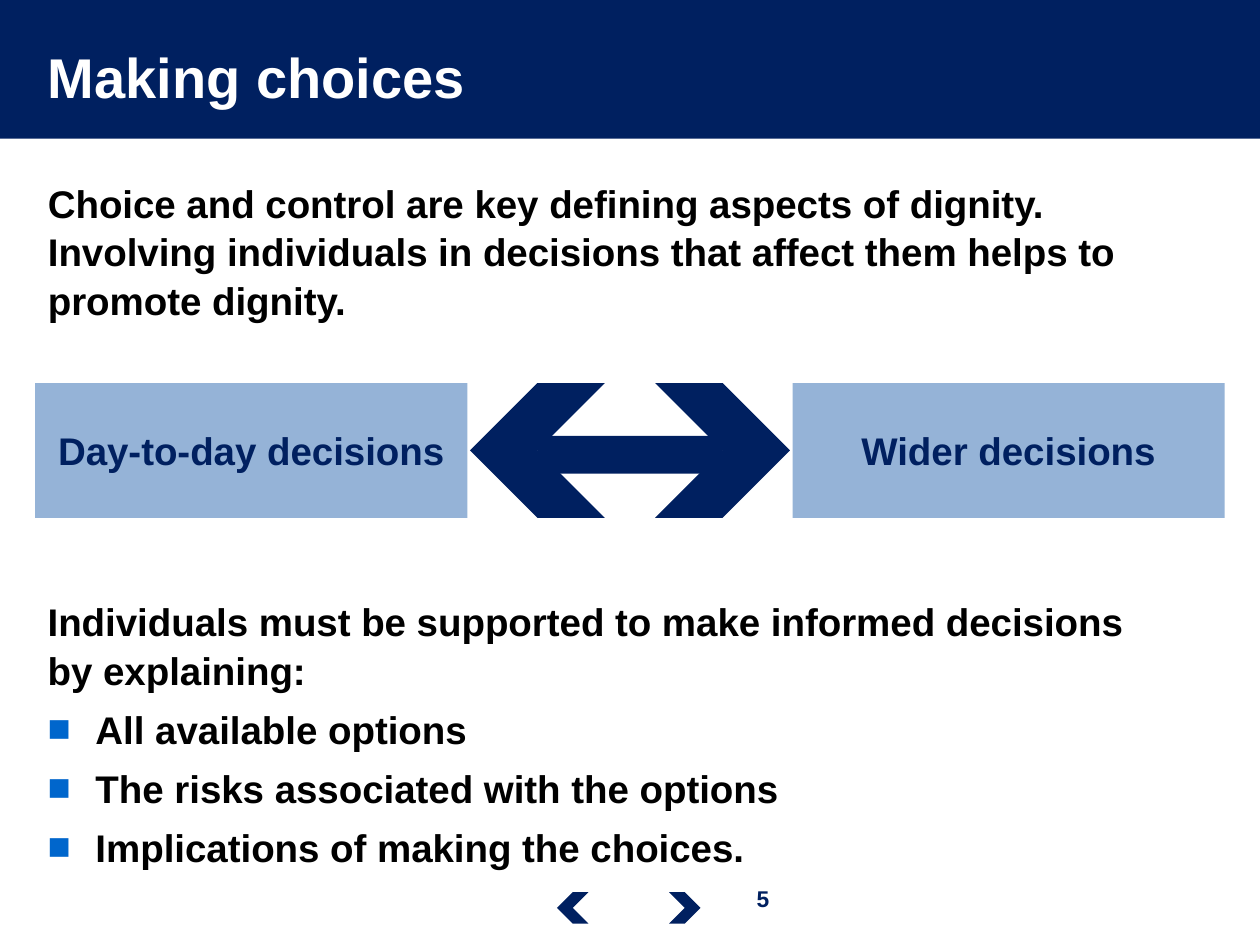
from lxml import etree
from pptx import Presentation
from pptx.dml.color import RGBColor
from pptx.enum.shapes import MSO_SHAPE
from pptx.enum.text import MSO_ANCHOR, MSO_AUTO_SIZE, PP_ALIGN
from pptx.oxml.ns import qn
from pptx.util import Inches, Pt

NAVY = RGBColor(0x00, 0x20, 0x60)
PALE_BLUE = RGBColor(0x95, 0xB3, 0xD7)
WHITE = RGBColor(0xFF, 0xFF, 0xFF)
BLACK = RGBColor(0x00, 0x00, 0x00)
BULLET_BLUE = "0066CC"

HEADING = {"name": "Arial", "size": Pt(32), "bold": True}
TEXT = {"name": "Arial", "size": Pt(22), "bold": True}
NUMBER = {"name": "Arial", "size": Pt(13), "bold": True}
PROSE = {"alignment": PP_ALIGN.LEFT, "line_spacing": 1.05, "space_before": Pt(0)}
CENTRED = {"alignment": PP_ALIGN.CENTER}


def inches(box):
    return [Inches(value) for value in box]


def apply(target, formats):
    for key, value in formats.items():
        setattr(target, key, value)


def place(placeholder, box):
    names = ("left", "top", "width", "height")
    apply(placeholder, dict(zip(names, inches(box))))


def write(paragraph, words, font, color, layout):
    paragraph.text = words
    apply(paragraph, layout)
    apply(paragraph.font, font)
    paragraph.font.color.rgb = color


def set_bullet(paragraph, character=None):
    """Give the paragraph a hanging square, or no bullet at all."""
    properties = paragraph._p.get_or_add_pPr()
    indent = Inches(0.38) if character else 0
    properties.set("marL", str(indent))
    properties.set("indent", str(-indent))
    if character is None:
        etree.SubElement(properties, qn("a:buNone"))
        return
    bullet_color = etree.SubElement(properties, qn("a:buClr"))
    etree.SubElement(bullet_color, qn("a:srgbClr"), val=BULLET_BLUE)
    etree.SubElement(properties, qn("a:buFont"), typeface="Arial")
    etree.SubElement(properties, qn("a:buChar"), char=character)


def add_block(slide, preset, box, fill, rotation=0):
    block = slide.shapes.add_shape(preset, *inches(box))
    block.shadow.inherit = False
    block.fill.solid()
    block.fill.fore_color.rgb = fill
    block.line.fill.background()
    block.rotation = rotation
    return block


def add_chevron_pair(slide, box):
    """Square chevrons at both ends of the box, pointing outwards."""
    left, top, width, size = box
    for x, rotation in ((left, 180), (left + width - size, 0)):
        add_block(slide, MSO_SHAPE.CHEVRON, (x, top, size, size), NAVY, rotation)


def add_header(slide, box):
    left, top, width, height = box
    band = add_block(slide, MSO_SHAPE.RECTANGLE, box, NAVY)
    slide.shapes._spTree.insert(2, band._element)  # behind the title
    title = slide.shapes.title
    place(title, (left + 0.28, top + 0.1, 7.9, height - 0.09))
    title.text_frame.vertical_anchor = MSO_ANCHOR.MIDDLE
    write(title.text_frame.paragraphs[0], "Making choices", HEADING, WHITE,
          {"alignment": PP_ALIGN.LEFT})


def add_introduction(slide, box):
    introduction = slide.placeholders[1]
    place(introduction, box)
    introduction.text_frame.auto_size = MSO_AUTO_SIZE.NONE
    paragraph = introduction.text_frame.paragraphs[0]
    set_bullet(paragraph)
    write(paragraph, "Choice and control are key defining aspects of dignity. "
          "Involving individuals in decisions that affect them helps to "
          "promote dignity.", TEXT, BLACK, PROSE)


def add_decision_range(slide, box):
    """Two kinds of decision joined by a double-headed arrow."""
    left, top, width, height = box
    label_width = 3.43
    labels = ((left, "Day-to-day decisions"),
              (left + width - label_width, "Wider decisions"))
    for x, words in labels:
        label = add_block(slide, MSO_SHAPE.RECTANGLE,
                          (x, top, label_width, height), PALE_BLUE)
        label.text_frame.vertical_anchor = MSO_ANCHOR.MIDDLE
        write(label.text_frame.paragraphs[0], words, TEXT, NAVY, CENTRED)

    # Arrow between the labels
    gap = 0.02
    arrow_left = left + label_width + gap
    arrow_width = width - 2 * (label_width + gap)
    add_chevron_pair(slide, (arrow_left, top, arrow_width, height))
    shaft_left = arrow_left + height / 2
    add_block(slide, MSO_SHAPE.RECTANGLE,
              (shaft_left, top + 0.42, arrow_width - height, 0.3), NAVY)


def add_explanation(slide, box):
    frame = slide.shapes.add_textbox(*inches(box)).text_frame
    frame.word_wrap = True
    write(frame.paragraphs[0], "Individuals must be supported to make informed "
          "decisions\vby explaining:", TEXT, BLACK, PROSE)
    for point in ("All available options",
                  "The risks associated with the options",
                  "Implications of making the choices."):
        paragraph = frame.add_paragraph()
        # Spacing comes before the bullet in the paragraph properties
        apply(paragraph, {**PROSE, "space_before": Pt(6)})
        set_bullet(paragraph, "■")
        write(paragraph, point, TEXT, BLACK, {})


def add_footer(slide, box):
    left, top, width, height = box
    add_chevron_pair(slide, (left, top + 0.11, 1.14, 0.25))
    number_width = 0.71
    number_box = (left + width - number_width, top, number_width, height)
    frame = slide.shapes.add_textbox(*inches(number_box)).text_frame
    frame.word_wrap = True
    write(frame.paragraphs[0], "5", NUMBER, NAVY, CENTRED)


def main():
    presentation = Presentation()
    presentation.slide_width = Inches(10)
    presentation.slide_height = Inches(7.5)
    slide = presentation.slides.add_slide(presentation.slide_layouts[1])
    add_header(slide, (0, 0, 10, 1.1))
    add_introduction(slide, (0.28, 1.36, 9, 1.25))
    add_decision_range(slide, (0.28, 3.04, 9.44, 1.07))
    add_explanation(slide, (0.28, 4.68, 9.44, 2.2))
    add_footer(slide, (4.42, 6.97, 1.99, 0.32))
    presentation.save("out.pptx")


if __name__ == "__main__":
    main()
